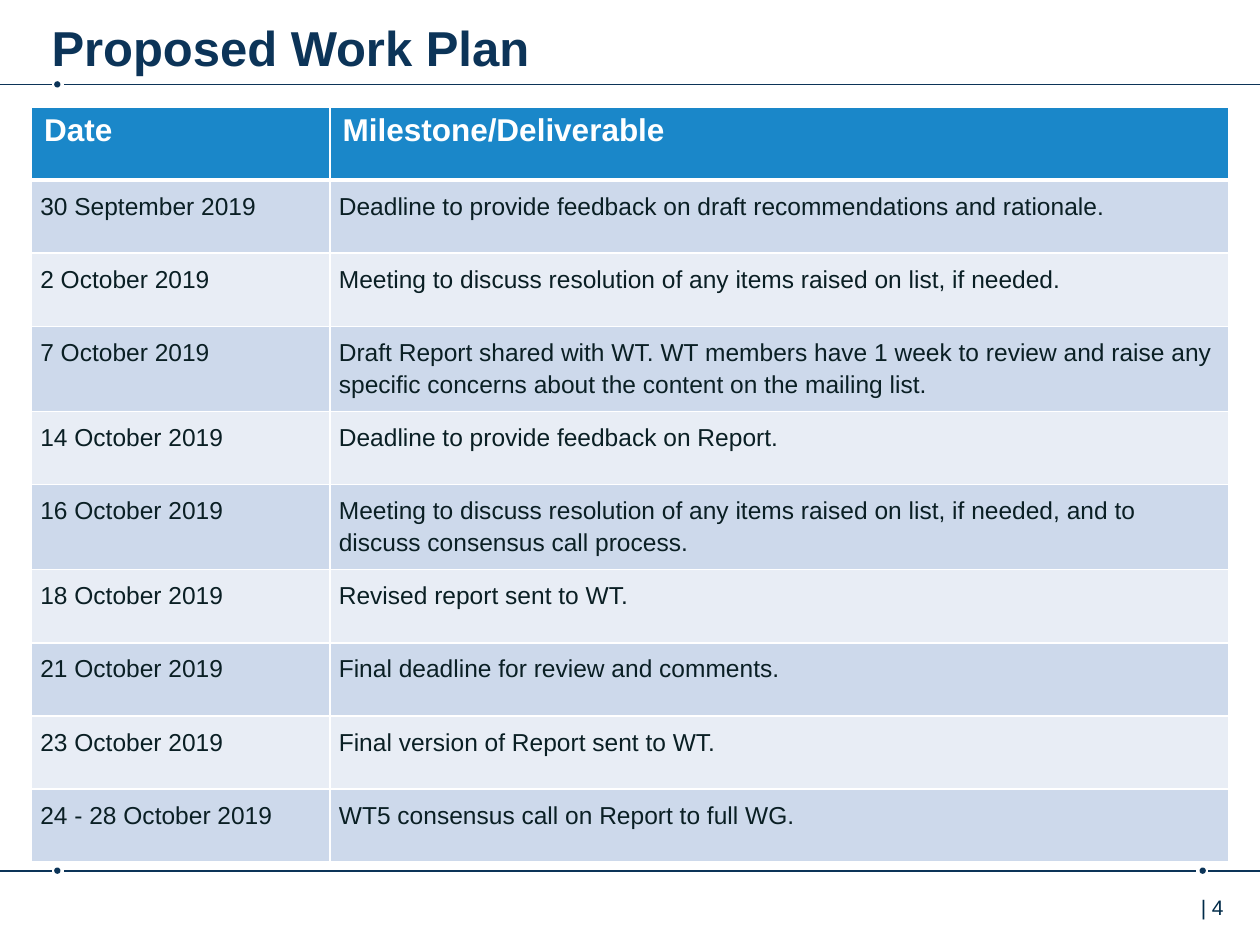
"""Build the Proposed Work Plan slide with its milestone table."""
import lxml.etree
import pptx
import pptx.dml.color
import pptx.enum.shapes
import pptx.enum.text
import pptx.oxml.ns
import pptx.util

Inches = pptx.util.Inches
Pt = pptx.util.Pt
qn = pptx.oxml.ns.qn
NAVY = "0C3458"
WHITE = "FFFFFF"


def color(value):
    return pptx.dml.color.RGBColor.from_string(value)


def write(frame, text, size, fill, bold=False, margins=(0.1, 0.05, 0.1, 0.05), spacing=None):
    sides = ("margin_left", "margin_top", "margin_right", "margin_bottom")
    layout = {side: Inches(margin) for side, margin in zip(sides, margins)}
    layout.update(word_wrap=True, vertical_anchor=pptx.enum.text.MSO_ANCHOR.TOP)
    for name, value in layout.items():
        setattr(frame, name, value)
    para = frame.paragraphs[0]
    para.line_spacing = spacing
    span = para.add_run()
    span.text = text
    for name, value in {"name": "Arial", "size": Pt(size), "bold": bold}.items():
        setattr(span.font, name, value)
    span.font.color.rgb = color(fill)


deck = pptx.Presentation()
deck.slide_width = Inches(10)
deck.slide_height = Inches(7.5)
page = deck.slides.add_slide(deck.slide_layouts[6])

rules = [
    (0.67, [0.43], [(0.41, 0), (10, 0.51)]),
    (6.91, [0.43, 9.52], [(0.41, 0), (9.49, 0.51), (9.59, 10)]),
]
for y, dots, segments in rules:
    for x in dots:
        dot = page.shapes.add_shape(
            pptx.enum.shapes.MSO_SHAPE.OVAL,
            Inches(x), Inches(y - 0.025), Inches(0.05), Inches(0.05))
        dot.shadow.inherit = False
        dot.fill.solid()
        dot.fill.fore_color.rgb = color(NAVY)
        dot.line.fill.background()
    for start, end in segments:
        line = page.shapes.add_connector(
            pptx.enum.shapes.MSO_CONNECTOR.STRAIGHT,
            Inches(start), Inches(y), Inches(end), Inches(y))
        line.line.color.rgb = color(NAVY)
        line.line.width = Pt(1)
        lxml.etree.SubElement(line._element.spPr, qn("a:effectLst"))

number = page.shapes.add_textbox(Inches(9.29), Inches(7.05), Inches(0.87), Inches(0.4))
write(number.text_frame, "| 4", 12, "002B49", margins=(0.24, 0.05, 0.1, 0.05))

title = page.shapes.add_textbox(Inches(0.41), Inches(0.05), Inches(9.5), Inches(0.49))
write(title.text_frame, "Proposed Work Plan", 28, NAVY, True, (0, 0.09, 0, 0))

milestones = [
    ("Date", "Milestone/Deliverable"),
    ("30 September 2019", "Deadline to provide feedback on draft recommendations and rationale."),
    ("2 October 2019", "Meeting to discuss resolution of any items raised on list, if needed."),
    ("7 October 2019", "Draft Report shared with WT. WT members have 1 week to review and raise any "
                       "specific concerns about the content on the mailing list."),
    ("14 October 2019", "Deadline to provide feedback on Report."),
    ("16 October 2019", "Meeting to discuss resolution of any items raised on list, if needed, "
                        "and to discuss consensus call process."),
    ("18 October 2019", "Revised report sent to WT."),
    ("21 October 2019", "Final deadline for review and comments."),
    ("23 October 2019", "Final version of Report sent to WT."),
    ("24 - 28 October 2019", "WT5 consensus call on Report to full WG."),
]
header_format = {"size": 18, "fill": WHITE, "bold": True}
body_format = {"size": 14, "fill": "0A1F24", "margins": (0.07,) * 4, "spacing": 1.15}

table = page.shapes.add_table(
    len(milestones), 2, Inches(0.25), Inches(0.85), Inches(9.5), Inches(5.8)).table
for column, width in zip(table.columns, (2.37, 7.13)):
    column.width = Inches(width)

for row, texts in enumerate(milestones):
    table.rows[row].height = Inches(0.58)
    shade = "1A87C9" if row == 0 else ("E8EDF5", "CDD9EB")[row % 2]
    for column, text in enumerate(texts):
        cell = table.cell(row, column)
        properties = cell._tc.get_or_add_tcPr()
        for side in ("L", "R", "T", "B"):
            thick = (row, side) in ((0, "B"), (1, "T"))
            border = lxml.etree.SubElement(
                properties, qn(f"a:ln{side}"), w=str(Pt(3 if thick else 1)))
            paint = lxml.etree.SubElement(border, qn("a:solidFill"))
            lxml.etree.SubElement(paint, qn("a:srgbClr"), val=WHITE)
        cell.fill.solid()
        cell.fill.fore_color.rgb = color(shade)
        text_format = dict(body_format if row else header_format)
        margins = text_format.pop("margins", (0.1, 0.05, 0.1, 0.05))
        write(cell.text_frame, text, margins=margins, **text_format)
        for side, margin in zip(("left", "top", "right", "bottom"), margins):
            setattr(cell, f"margin_{side}", Inches(margin))

deck.save("out.pptx")
